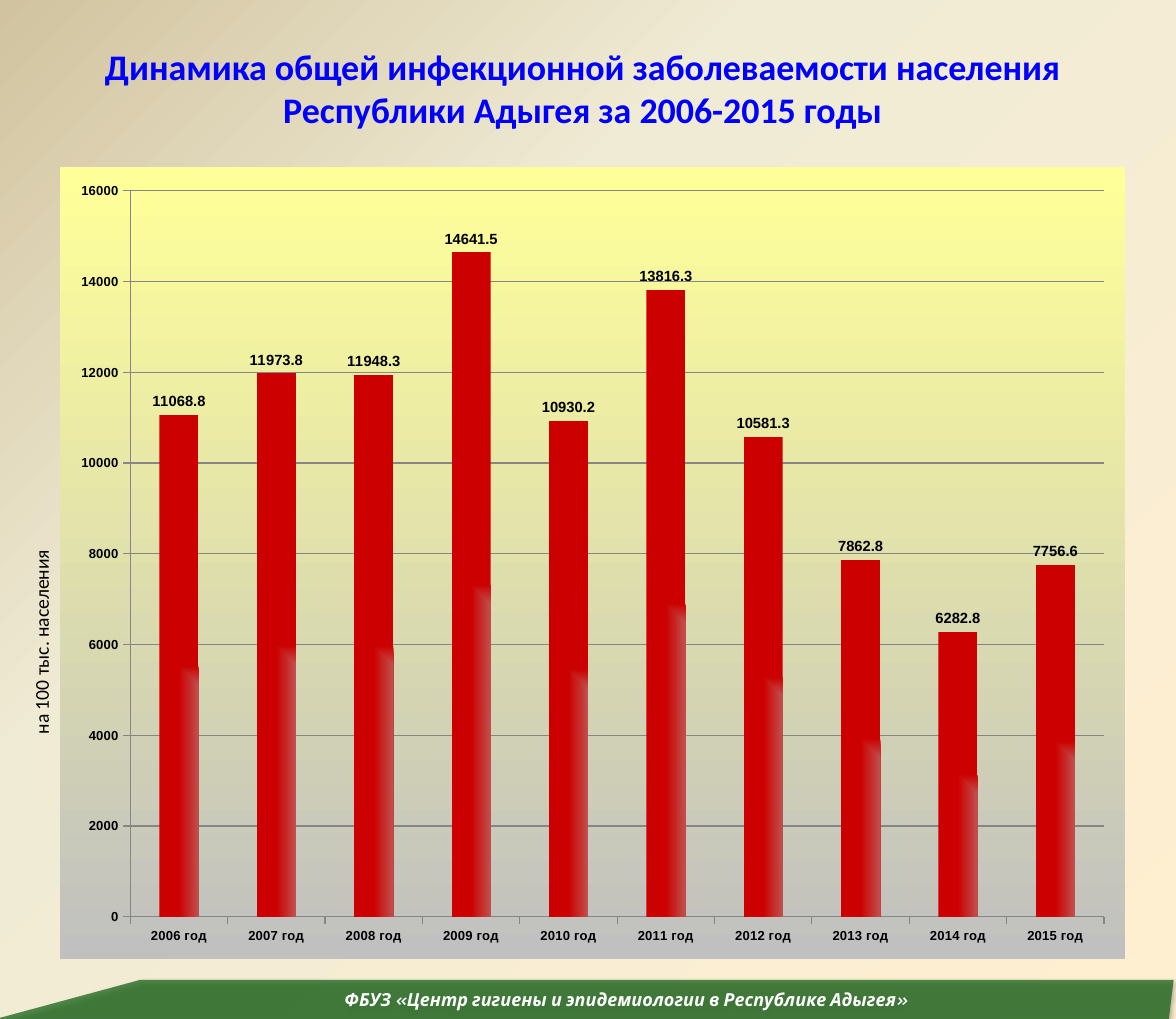
from lxml import etree
from pptx import Presentation
from pptx.chart.data import CategoryChartData
from pptx.dml.color import RGBColor
from pptx.enum.chart import XL_CHART_TYPE as ChartType
from pptx.enum.chart import XL_LABEL_POSITION as LabelPosition
from pptx.enum.chart import XL_TICK_MARK as TickMark
from pptx.enum.text import MSO_ANCHOR as Anchor
from pptx.enum.text import PP_ALIGN as Align
from pptx.oxml import parse_xml
from pptx.oxml.ns import nsdecls, qn
from pptx.util import Inches, Pt

BLUE = RGBColor(0x00, 0x00, 0xFF)
BLACK = RGBColor(0x00, 0x00, 0x00)
WHITE = RGBColor(0xFF, 0xFF, 0xFF)
GREEN = RGBColor(0x19, 0x66, 0x19)
GRID_GRAY = RGBColor(0x86, 0x86, 0x86)
CREAM = RGBColor(0xFF, 0xEF, 0xD1)
IVORY = RGBColor(0xF0, 0xEB, 0xD5)
SAND = RGBColor(0xD1, 0xC3, 0x9F)
YELLOW = RGBColor(0xFF, 0xFF, 0x99)
SILVER = RGBColor(0xC0, 0xC0, 0xC0)
SOFT_RED = RGBColor(0xC0, 0x50, 0x4D)
RED = RGBColor(0xCC, 0x00, 0x00)

SLIDE_WIDTH = Inches(10)
SLIDE_HEIGHT = Inches(22 / 2.54)  # 22 cm

YEARS = [f"{year} год" for year in range(2006, 2016)]
RATES = [11068.8, 11973.8, 11948.3, 14641.5, 10930.2,
         13816.3, 10581.3, 7862.8, 6282.8, 7756.6]

CORNER_PATH = '<a:path path="rect"><a:fillToRect l="100000" t="100000"/></a:path>'


def linear(degrees):
    return f'<a:lin ang="{degrees * 60000}" scaled="1"/>'


def gradient(stops, direction):
    stop_xml = "".join(
        f'<a:gs pos="{position * 1000}"><a:srgbClr val="{color}"/></a:gs>'
        for position, color in stops)
    return parse_xml(f'<a:gradFill {nsdecls("a")} rotWithShape="1">'
                     f'<a:gsLst>{stop_xml}</a:gsLst>{direction}</a:gradFill>')


def replace_solid_fill(parent, new_fill):
    solid = next(parent.iter(qn("a:solidFill")))
    solid.getparent().replace(solid, new_fill)


def style_font(font, size, color, name, bold=False, italic=False):
    font.size, font.name = Pt(size), name
    font.bold, font.italic = bold, italic
    font.color.rgb = color


def add_background(slide):
    slide.background.fill.solid()
    background = slide.element.find(f".//{qn('p:bg')}")
    replace_solid_fill(background, gradient(
        [(0, CREAM), (65, IVORY), (100, SAND)], linear(225)))


def add_label(slide, box, text, size, color, bold=False, align=Align.LEFT):
    shape = slide.shapes.add_textbox(*map(Inches, box))
    shape.text_frame.word_wrap = True
    paragraph = shape.text_frame.paragraphs[0]
    paragraph.text = text
    paragraph.alignment = align
    style_font(paragraph.font, size, color, "Calibri", bold)
    return shape


def add_rate_chart(slide, box):
    data = CategoryChartData()
    data.categories = YEARS
    data.add_series("Series 1", RATES)
    chart = slide.shapes.add_chart(
        ChartType.COLUMN_CLUSTERED, *map(Inches, box), data).chart
    chart.has_legend = chart.has_title = False
    style_font(chart.font, 10, BLACK, "Arial")

    # Axes and gridlines
    for axis in (chart.category_axis, chart.value_axis):
        axis.major_tick_mark = TickMark.OUTSIDE
        axis.format.line.color.rgb = GRID_GRAY
        style_font(axis.tick_labels.font, 8, BLACK, "Arial", bold=True)
    chart.value_axis.minimum_scale = 0
    chart.value_axis.maximum_scale = 16000
    chart.value_axis.major_unit = 2000
    gridlines = chart.value_axis.major_gridlines.format.line
    gridlines.color.rgb = GRID_GRAY
    gridlines.width = Pt(0.75)

    # Columns and value labels
    plot = chart.plots[0]
    plot.gap_width = 150
    plot.vary_by_categories = False
    series = plot.series[0]
    series.invert_if_negative = False
    series.format.fill.solid()
    series.format.fill.fore_color.rgb = RED
    replace_solid_fill(chart.element.find(f".//{qn('c:ser')}"),
                       gradient([(0, SOFT_RED), (100, RED)], CORNER_PATH))
    labels = series.data_labels
    labels.show_value = True
    labels.position = LabelPosition.OUTSIDE_END
    style_font(labels.font, 9, BLACK, "Arial", bold=True)

    # Chart area fill
    area = parse_xml(f'<c:spPr {nsdecls("c", "a")}><a:ln><a:noFill/></a:ln></c:spPr>')
    area.insert(0, gradient([(0, YELLOW), (100, SILVER)], linear(90)))
    chart.element.find(qn("c:chart")).addnext(area)

    # Plot area position, as fractions of the chart
    plot_area = chart.element.find(f".//{qn('c:plotArea')}")
    for old_layout in plot_area.findall(qn("c:layout")):
        plot_area.remove(old_layout)
    fractions = {"x": 0.066, "y": 0.03, "w": 0.914, "h": 0.917}
    sizes = "".join(f'<c:{key} val="{value}"/>' for key, value in fractions.items())
    plot_area.insert(0, parse_xml(
        f'<c:layout {nsdecls("c")}><c:manualLayout><c:layoutTarget val="inner"/>'
        f'<c:xMode val="edge"/><c:yMode val="edge"/>{sizes}'
        '</c:manualLayout></c:layout>'))


def add_footer(slide, box):
    left, top, width, height = box
    right, bottom = left + width, top + height
    builder = slide.shapes.build_freeform(Inches(left), Inches(bottom), scale=1.0)
    corners = [(left + 1.22, top), (right - 0.02, top), (right - 0.06, bottom)]
    builder.add_line_segments([(Inches(x), Inches(y)) for x, y in corners], close=True)
    banner = builder.convert_to_shape()
    banner.fill.solid()
    banner.fill.fore_color.rgb = GREEN
    banner.line.fill.background()
    color = banner.element.spPr.find(f"{qn('a:solidFill')}/{qn('a:srgbClr')}")
    etree.SubElement(color, qn("a:alpha"), val="75000")

    # Soft shadow below the banner
    banner.shadow.inherit = False
    effects = banner.element.spPr.find(qn("a:effectLst"))
    effects.append(parse_xml(
        f'<a:outerShdw {nsdecls("a")} blurRad="{Pt(3.1)}" dist="{Pt(1.8)}" '
        'dir="5400000" rotWithShape="0"><a:srgbClr val="000000">'
        '<a:alpha val="35000"/></a:srgbClr></a:outerShdw>'))

    frame = banner.text_frame
    frame.word_wrap = True
    frame.vertical_anchor = Anchor.MIDDLE
    frame.margin_left = Inches(0.8)
    paragraph = frame.paragraphs[0]
    paragraph.text = "ФБУЗ «Центр гигиены и эпидемиологии в Республике Адыгея»"
    paragraph.alignment = Align.CENTER
    style_font(paragraph.font, 11, WHITE, "Karla", bold=True, italic=True)


def add_unit_label(slide, box):
    label = add_label(slide, box, "на 100 тыс. населения", 12, BLACK)
    label.element.find(f".//{qn('a:bodyPr')}").set("vert", "vert270")


def main():
    presentation = Presentation()
    presentation.slide_width = SLIDE_WIDTH
    presentation.slide_height = SLIDE_HEIGHT
    slide = presentation.slides.add_slide(presentation.slide_layouts[6])

    add_background(slide)
    add_label(slide, (0.35, 0.33, 9.21, 0.84),
              "Динамика общей инфекционной заболеваемости населения "
              "Республики Адыгея за 2006-2015 годы",
              22, BLUE, bold=True, align=Align.CENTER)
    add_rate_chart(slide, (0.51, 1.42, 9.06, 6.73))
    add_footer(slide, (-0.03, 8.33, 10.03, 0.33))
    add_unit_label(slide, (0.2, 3.79, 0.4, 2.55))

    presentation.save("out.pptx")


if __name__ == "__main__":
    main()
